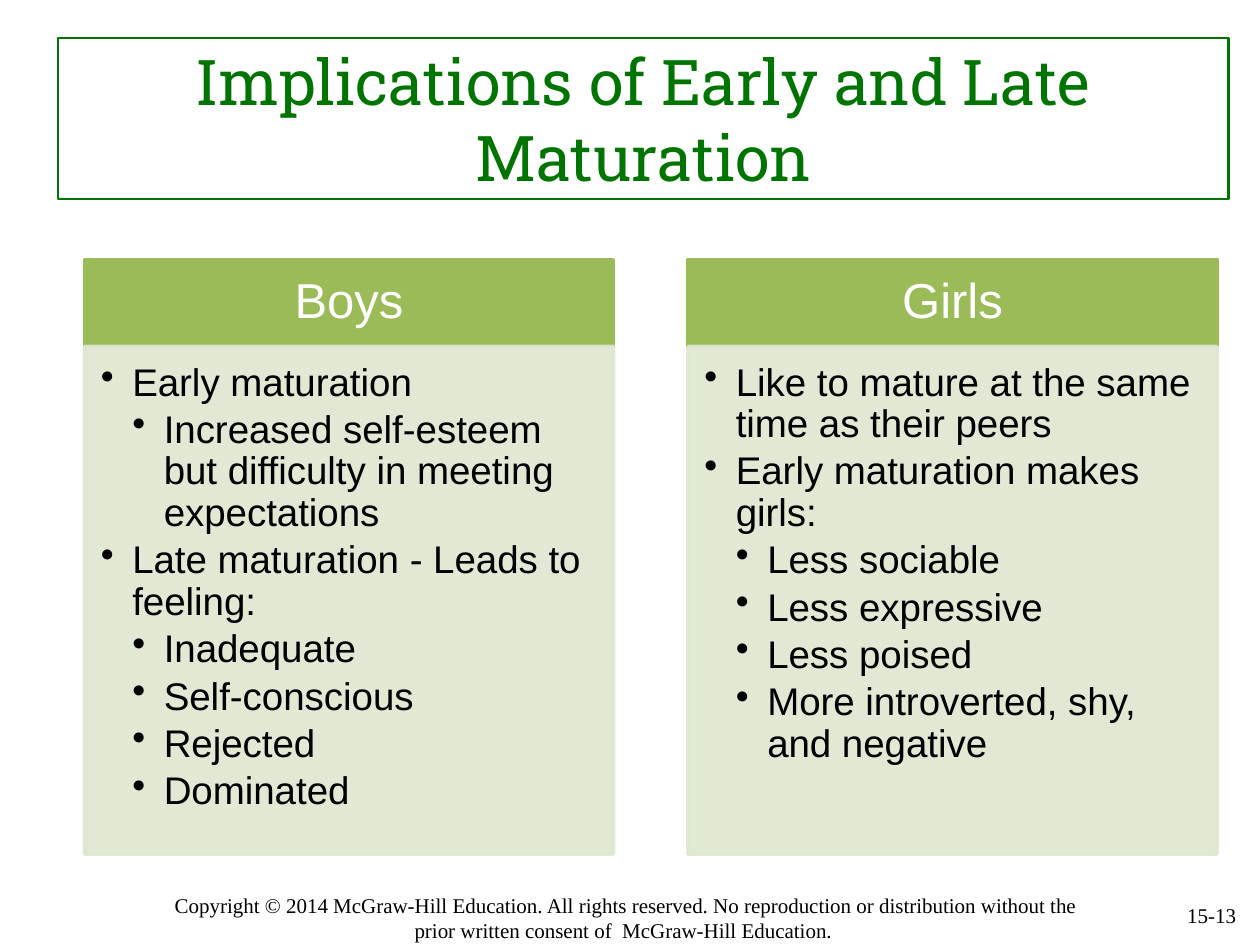
from dataclasses import dataclass

from lxml import etree
from pptx import Presentation
from pptx import util as u
from pptx.dml.color import RGBColor
from pptx.enum import shapes, text
from pptx.oxml.ns import qn


@dataclass(frozen=True)
class Theme:
    title_font: str = "Roboto Slab"
    body_font: str = "Arial"
    footer_font: str = "Times New Roman"
    title_size: int = 36
    heading_size: int = 28
    body_size: int = 22
    footer_size: int = 12
    dark_green: str = "007400"
    green: str = "9BBB59"
    pale_green: str = "DEE7D1"
    black: str = "000000"
    white: str = "FFFFFF"


THEME = Theme()
CENTER, RIGHT = text.PP_ALIGN.CENTER, text.PP_ALIGN.RIGHT
TOP, MIDDLE = text.MSO_ANCHOR.TOP, text.MSO_ANCHOR.MIDDLE

TITLE = "Implications of Early and Late Maturation"
COPYRIGHT = ("Copyright © 2014 McGraw-Hill Education. All rights reserved. "
             "No reproduction or distribution without the prior written "
             "consent of  McGraw-Hill Education. ")
# Each column: heading and (level, wording) points
COLUMNS = [
    ("Boys", [
        (1, "Early maturation"),
        (2, "Increased self-esteem but difficulty in meeting expectations"),
        (1, "Late maturation - Leads to feeling:"),
        (2, "Inadequate"),
        (2, "Self-conscious"),
        (2, "Rejected"),
        (2, "Dominated"),
    ]),
    ("Girls", [
        (1, "Like to mature at the same time as their peers"),
        (1, "Early maturation makes girls:"),
        (2, "Less sociable"),
        (2, "Less expressive"),
        (2, "Less poised"),
        (2, "More introverted, shy, and negative"),
    ]),
]


def write(para, wording, *, font, size, color, align=None, level=0,
          line=None, after=None):
    """Put formatted text in a paragraph; level 1 and up is bulleted."""
    if level:
        props = para._p.get_or_add_pPr()
        props.set("marL", str(u.Inches(0.25 * level)))
        props.set("indent", str(u.Inches(-0.25)))
        etree.SubElement(props, qn("a:buChar")).set("char", "•")
        para.level = level
    para.alignment = align
    para.line_spacing = line
    para.space_after = after
    span = para.add_run()
    span.text = wording
    span.font.name = font
    span.font.size = u.Pt(size)
    span.font.color.rgb = RGBColor.from_string(color)


def set_alpha(fill, percent):
    color = fill._xPr.find(qn("a:solidFill"))[0]
    etree.SubElement(color, qn("a:alpha")).set("val", str(percent * 1000))


class SlideBuilder:
    def __init__(self, page, theme):
        self.page = page
        self.theme = theme

    def frame(self, shape, insets, anchor):
        box = shape.text_frame
        box.word_wrap = True
        box.vertical_anchor = anchor
        (box.margin_left, box.margin_top,
         box.margin_right, box.margin_bottom) = map(u.Inches, insets)
        return box

    def label(self, at, wording, align, insets, anchor):
        shape = self.page.shapes.add_textbox(*map(u.Inches, at))
        box = self.frame(shape, insets, anchor)
        write(box.paragraphs[0], wording, font=self.theme.footer_font,
              size=self.theme.footer_size, color=self.theme.black, align=align)

    def panel(self, at, fill, line, width, insets, anchor, alpha=None):
        shape = self.page.shapes.add_shape(
            shapes.MSO_SHAPE.RECTANGLE, *map(u.Inches, at))
        shape.shadow.inherit = False
        if fill:
            shape.fill.solid()
            shape.fill.fore_color.rgb = RGBColor.from_string(fill)
        else:
            shape.fill.background()
        shape.line.color.rgb = RGBColor.from_string(line)
        shape.line.width = u.Pt(width)
        if alpha:
            set_alpha(shape.fill, alpha)
            set_alpha(shape.line.fill, alpha)
        return self.frame(shape, insets, anchor)

    def title(self, at, wording):
        theme = self.theme
        box = self.panel(at, None, theme.dark_green, 1.25,
                         (0.1, 0.05, 0.1, 0.05), MIDDLE)
        write(box.paragraphs[0], wording, font=theme.title_font,
              size=theme.title_size, color=theme.dark_green, align=CENTER)

    def heading(self, at, wording):
        theme = self.theme
        box = self.panel(at, theme.green, theme.green, 2,
                         (0.22, 0.12, 0.22, 0.12), MIDDLE)
        write(box.paragraphs[0], wording, font=theme.body_font,
              size=theme.heading_size, color=theme.white, align=CENTER, line=0.9)

    def points(self, at, items):
        theme = self.theme
        box = self.panel(at, theme.pale_green, theme.pale_green, 2,
                         (0.13, 0.13, 0.17, 0.19), TOP, alpha=90)
        for index, (level, wording) in enumerate(items):
            para = box.add_paragraph() if index else box.paragraphs[0]
            write(para, wording, font=theme.body_font, size=theme.body_size,
                  color=theme.black, align=text.PP_ALIGN.LEFT, level=level,
                  line=0.9, after=u.Pt(0.15 * theme.body_size))


def main():
    deck = Presentation()
    deck.slide_width, deck.slide_height = u.Inches(10), u.Inches(7.5)
    page = deck.slides.add_slide(deck.slide_layouts[6])
    builder = SlideBuilder(page, THEME)

    # Footer
    builder.label((1.27, 7.08, 7.4, 0.4), COPYRIGHT, CENTER, (0, 0, 0, 0), TOP)
    builder.label((7.58, 7.06, 2.33, 0.4), "15-13", RIGHT,
                  (0.1, 0.05, 0.1, 0.05), MIDDLE)

    # Title
    builder.title((0.46, 0.3, 9.29, 1.28), TITLE)

    # Two columns, each a heading above its points
    left, top, width, pitch = 0.67, 2.06, 4.2, 4.79
    heading_height, points_height = 0.69, 4.03
    for index, (heading, items) in enumerate(COLUMNS):
        x = left + index * pitch
        builder.heading((x, top, width, heading_height), heading)
        builder.points((x, top + heading_height, width, points_height), items)

    deck.save("out.pptx")


if __name__ == "__main__":
    main()
